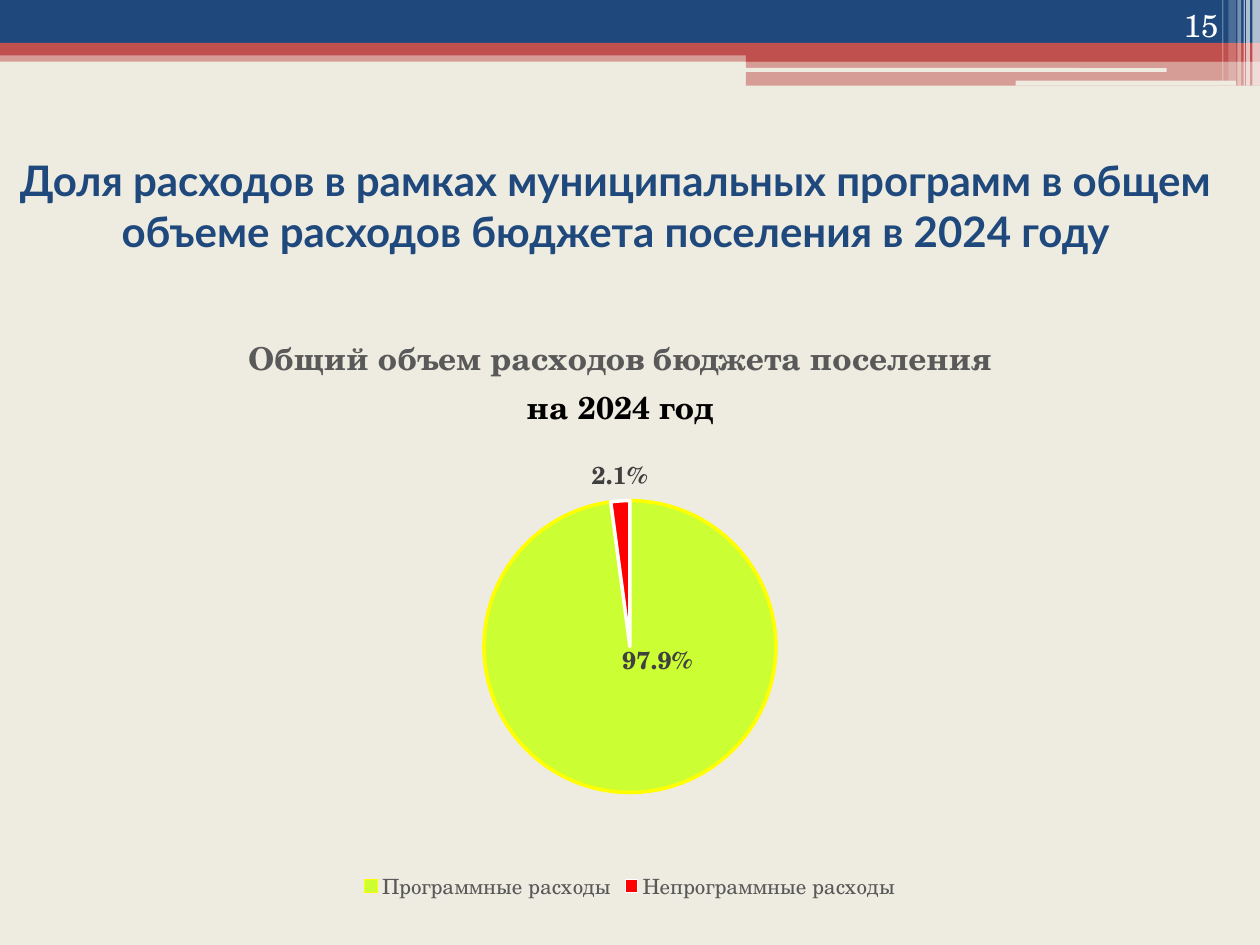
from dataclasses import dataclass
from pptx import Presentation, util as u
from pptx.chart.data import CategoryChartData
from pptx.dml.color import RGBColor
from pptx.enum import chart as ch, shapes, text
from pptx.oxml import parse_xml
from pptx.oxml.ns import nsdecls, qn


@dataclass(frozen=True)
class Theme:
    paper: str = "EEECE1"
    navy: str = "1F497D"
    red: str = "C0504D"
    white: str = "FFFFFF"
    black: str = "000000"
    grey: str = "595959"
    label: str = "404040"
    lime: str = "CCFF33"
    yellow: str = "FFFF00"
    alert: str = "FF0000"
    heading: str = "Lato"
    body: str = "TeX Gyre Schola"
    title_size: int = 24
    large: int = 18
    medium: int = 14
    small: int = 12


T = Theme()
W, H = 10, 7.5

# Content
TITLE = "Доля расходов в рамках муниципальных программ в общем объеме расходов бюджета поселения в 2024 году"
CHART_TITLE = [("Общий объем расходов бюджета поселения", T.grey), ("на 2024 год", T.black)]
SHARES = [  # category, share, fill, outline
    ("Программные расходы", 0.979, T.lime, T.yellow),
    ("Непрограммные расходы", 0.021, T.alert, T.white),
]
PAGE = "15"

# Header bands: left, top, width, height, colour, opacity in percent
BANDS = [
    (0, 0.4, W, 0.09, T.red, 50),
    (0, 0, W, 0.34, T.navy, 100),
    (0, 0.34, W, 0.1, T.red, 100),
    (5.92, 0.39, 4.08, 0.1, T.red, 100),
    (5.92, 0.48, 4.08, 0.2, T.red, 50),
]
SLOTS = [(5.91, 0.54, 3.35, 0.03), (8.06, 0.64, 1.75, 0.04)]
# Corner stripes: left, width, height, opacity in percent
STRIPES = [
    (9.94, 0.06, 0.68, 65), (9.89, 0.03, 0.68, 65), (9.87, 0.01, 0.68, 60),
    (9.82, 0.03, 0.68, 40), (9.75, 0.06, 0.64, 20), (9.7, 0.01, 0.64, 30),
]
CHART_BOX = (0.5, 2.46, 9, 4.73)


def rgb(c):
    return RGBColor.from_string(c)


def inches(box):
    return [u.Inches(v) for v in box]


def style(font, size, color, bold=False, name=T.body):
    for key, value in dict(size=u.Pt(size), bold=bold, name=name).items():
        setattr(font, key, value)
    font.color.rgb = rgb(color)


def band(s, box, color, opacity=100, kind=shapes.MSO_SHAPE.RECTANGLE):
    sp = s.shapes.add_shape(kind, *inches(box))
    sp.shadow.inherit = False
    sp.line.fill.background()
    sp.fill.solid()
    sp.fill.fore_color.rgb = rgb(color)
    if opacity < 100:
        clr = sp.fill._xPr.find(".//" + qn("a:srgbClr"))
        clr.append(parse_xml(f'<a:alpha {nsdecls("a")} val="{opacity * 1000}"/>'))


def write(sp, value, align, anchor, **font):
    tf = sp.text_frame
    tf.word_wrap, tf.vertical_anchor = True, anchor
    p = tf.paragraphs[0]
    p.alignment = align
    r = p.add_run()
    r.text = value
    style(r.font, **font)


def layout_xml(**parts):
    items = "".join(f'<c:{k} val="{v}"/>' for k, v in parts.items())
    return parse_xml(f'<c:layout {nsdecls("c")}><c:manualLayout>{items}</c:manualLayout></c:layout>')


def set_layout(parent, before, **parts):
    for old in parent.findall(qn("c:layout")):
        parent.remove(old)
    parent.find(qn(before)).addprevious(layout_xml(**parts))


def add_pie(s):
    data = CategoryChartData(number_format="0.0%")
    data.categories = [row[0] for row in SHARES]
    data.add_series("Series 1", [row[1] for row in SHARES])
    chart = s.shapes.add_chart(ch.XL_CHART_TYPE.PIE, *inches(CHART_BOX), data).chart
    style(chart.font, T.small, T.grey)

    # Chart title
    chart.has_title = True
    tf = chart.chart_title.text_frame
    for i, (line, color) in enumerate(CHART_TITLE):
        p = tf.add_paragraph() if i else tf.paragraphs[0]
        r = p.add_run()
        r.text = line
        style(r.font, T.large, color, True)
    chart.chart_title.include_in_layout = False
    set_layout(chart.chart_title._element, "c:overlay", xMode="edge", yMode="edge", x=0.16, y=0.03)

    # Legend
    chart.has_legend = True
    chart.legend.position = ch.XL_LEGEND_POSITION.BOTTOM
    chart.legend.include_in_layout = False
    style(chart.legend.font, T.small, T.grey)

    # Slices and value labels
    plot = chart.plots[0]
    plot.vary_by_categories = True
    series = plot.series[0]
    for i, (_, _, fill, line) in enumerate(SHARES):
        fmt = series.points[i].format
        fmt.fill.solid()
        fmt.fill.fore_color.rgb = rgb(fill)
        fmt.line.color.rgb = rgb(line)
        fmt.line.width = u.Pt(2)
    labels = series.data_labels
    for key, value in dict(show_value=True, show_percentage=False, number_format="0.0%",
                           number_format_is_linked=False,
                           position=ch.XL_LABEL_POSITION.OUTSIDE_END).items():
        setattr(labels, key, value)
    style(labels.font, T.medium, T.label, True)
    main = series.points[0].data_label
    style(main.font, T.medium, T.label, True)
    main.position = ch.XL_LABEL_POSITION.CENTER
    dlbl = labels._element.find(qn("c:dLbl"))
    dlbl.find(qn("c:idx")).addnext(layout_xml(x=0.02, y=-0.1))

    # Pie circle as shares of the chart box
    area = chart._chartSpace.chart.plotArea
    set_layout(area, "c:pieChart", layoutTarget="inner", xMode="edge", yMode="edge",
               x=0.37, y=0.32, w=0.26, h=0.49)


def main():
    prs = Presentation()
    prs.slide_width, prs.slide_height = inches((W, H))
    s = prs.slides.add_slide(prs.slide_layouts[5])
    s.background.fill.solid()
    s.background.fill.fore_color.rgb = rgb(T.paper)

    # Header
    for *box, color, opacity in BANDS:
        band(s, box, color, opacity)
    for box in SLOTS:
        band(s, box, T.paper, kind=shapes.MSO_SHAPE.ROUNDED_RECTANGLE)
    for left, width, height, opacity in STRIPES:
        band(s, (left, 0, width, height), T.white, opacity)

    # Title
    title = s.shapes.title
    title.left, title.top, title.width, title.height = inches((0, 0.84, 9.77, 1.58))
    write(title, TITLE, text.PP_ALIGN.CENTER, text.MSO_ANCHOR.MIDDLE,
          size=T.title_size, color=T.navy, bold=True, name=T.heading)

    add_pie(s)

    # Page number
    page = s.shapes.add_textbox(*inches((8.94, 0, 0.83, 0.4)))
    write(page, PAGE, text.PP_ALIGN.RIGHT, text.MSO_ANCHOR.BOTTOM, size=T.large, color=T.white)

    prs.save("out.pptx")


if __name__ == "__main__":
    main()
